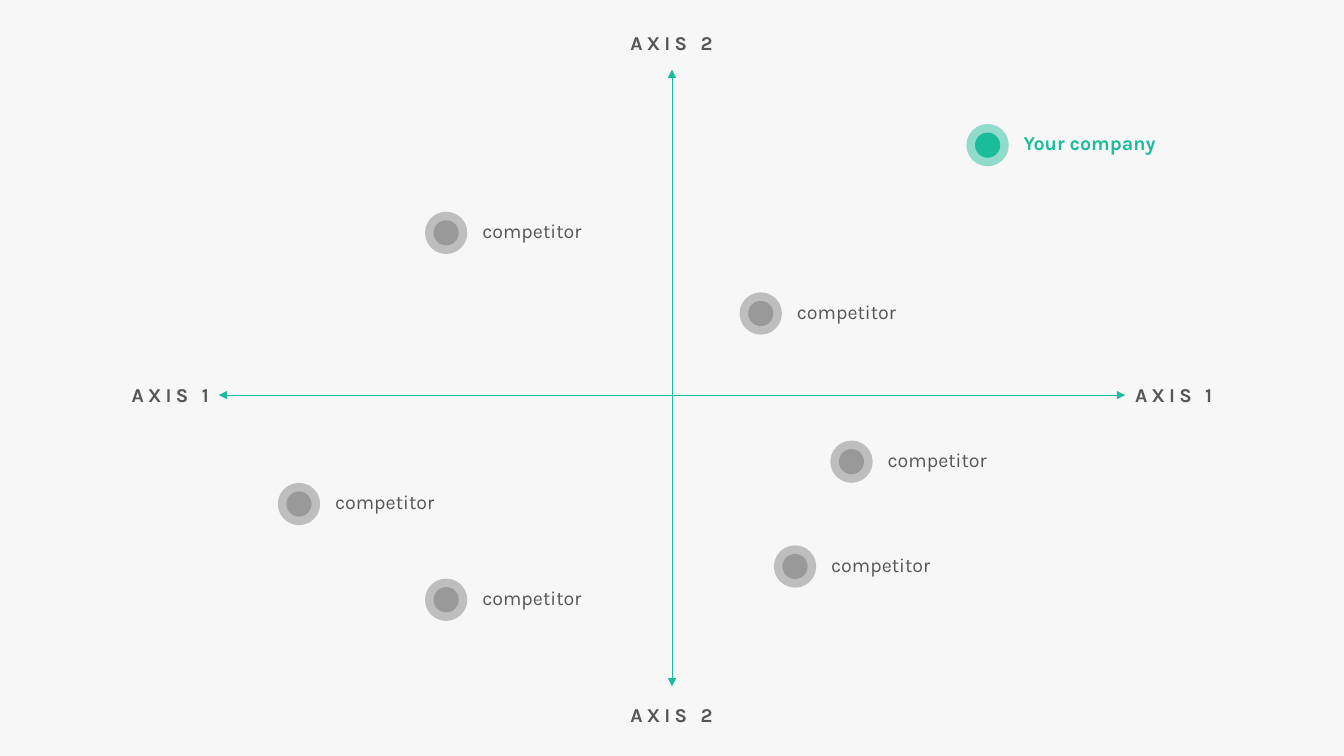
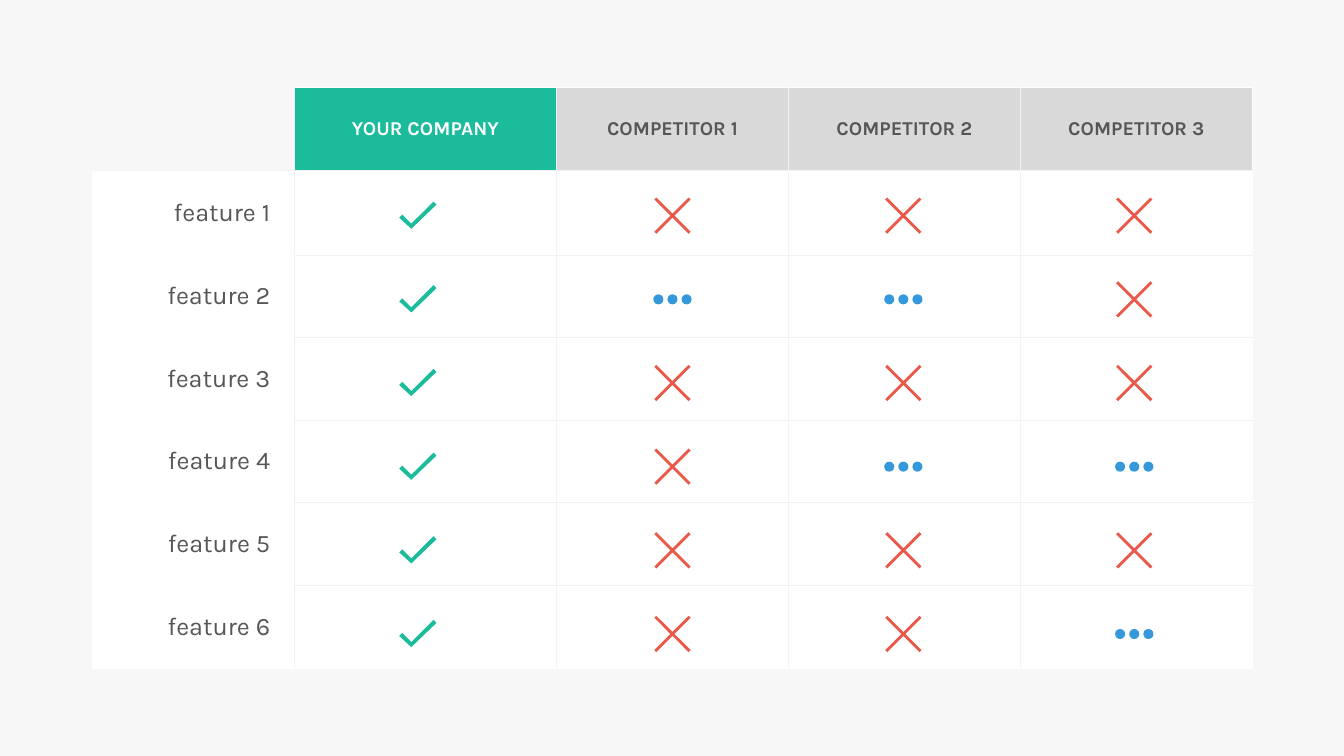
import pptx
import pptx.util
import pptx.dml.color
import pptx.enum.shapes
import pptx.enum.text
import pptx.oxml.ns
import lxml.etree

# Shared look
Inches = pptx.util.Inches
Pt = pptx.util.Pt
ALIGN = pptx.enum.text.PP_ALIGN
SHAPE = pptx.enum.shapes.MSO_SHAPE
qn = pptx.oxml.ns.qn
FONT = "Karla"
GREEN, GRAY, RED, BLUE = "1ABC9C", "565656", "E95849", "3498DB"
BACK, WHITE, HEAD, RULE = "F7F7F7", "FFFFFF", "D9D9D9", "F2F2F2"


def color(hue):
    return pptx.dml.color.RGBColor.from_string(hue)


def paint(fill, hue):
    fill.solid()
    fill.fore_color.rgb = color(hue)


def style(para, size, hue, bold=False, align=ALIGN.LEFT, space=0):
    para.alignment = align
    for run in para.runs:
        font = run.font
        font.name, font.size, font.bold = FONT, Pt(size), bold
        font.color.rgb = color(hue)
        if space:
            run.font._element.set("spc", str(space * 100))


def label(shapes, left, top, text, hue=GRAY, **look):
    box = shapes.add_textbox(Inches(left), Inches(top), Inches(1.87), Inches(0.34))
    frame = box.text_frame
    frame.word_wrap = True
    frame.auto_size = pptx.enum.text.MSO_AUTO_SIZE.SHAPE_TO_FIT_TEXT
    frame.vertical_anchor = pptx.enum.text.MSO_ANCHOR.MIDDLE
    frame.text = text
    style(frame.paragraphs[0], 14, hue, **look)


def disc(shapes, x, y, size, hue, alpha=100):
    """Draw a circle centred on x, y."""
    dot = shapes.add_shape(SHAPE.OVAL, Inches(x - size / 2), Inches(y - size / 2),
                           Inches(size), Inches(size))
    dot.shadow.inherit = False
    dot.line.fill.background()
    paint(dot.fill, hue)
    if alpha < 100:
        tint = dot.element.spPr.find(".//" + qn("a:srgbClr"))
        lxml.etree.SubElement(tint, qn("a:alpha"), val=str(alpha * 1000))


# Market map
RIVALS = [(0.88, -0.81), (1.78, 0.66), (1.22, 1.7),
          (-3.7, 1.08), (-2.24, 2.03), (-2.24, -1.61)]


def arrow(shapes, x1, y1, x2, y2):
    line = shapes.add_connector(pptx.enum.shapes.MSO_CONNECTOR.STRAIGHT,
                                Inches(x1), Inches(y1), Inches(x2), Inches(y2))
    line.line.width = Pt(0.5)
    line.line.color.rgb = color(GREEN)
    props = line.element.spPr
    for end in ("a:headEnd", "a:tailEnd"):
        lxml.etree.SubElement(props.find(qn("a:ln")), qn(end), type="triangle")
    lxml.etree.SubElement(props, qn("a:effectLst"))


def marker(shapes, x, y, text, hue, ring, core, bold=False):
    group = shapes.add_group_shape().shapes
    disc(group, x, y, 0.42, hue, ring)
    disc(group, x, y, 0.25, hue, core)
    label(group, x + 0.26, y - 0.19, text, hue, bold=bold)


def draw_map(slide, left, top, width, height):
    shapes = slide.shapes
    right, base = left + width, top + height
    x, y = left + width / 2, top + 3.23
    arrow(shapes, x, top, x, base)
    arrow(shapes, left, y, right, y)
    for dx, dy in RIVALS:
        marker(shapes, x + dx, y + dy, "competitor", GRAY, 35, 35)
    marker(shapes, x + 3.13, y - 2.48, "Your company", GREEN, 46, 100, True)

    # Axis names
    for lx, ly, text, align in (
            (x - 0.94, top - 0.44, "AXIS 2", ALIGN.CENTER),
            (x - 0.94, base + 0.11, "AXIS 2", ALIGN.CENTER),
            (right, y - 0.17, "AXIS 1", ALIGN.LEFT),
            (left - 1.87, y - 0.17, "AXIS 1", ALIGN.RIGHT)):
        label(shapes, lx, ly, text, bold=True, align=align, space=3)


# Feature table
HEADS = ["", "YOUR COMPANY", "COMPETITOR 1", "COMPETITOR 2", "COMPETITOR 3"]
COLS = [2, 2.6, 2.3, 2.3, 2.3]
ROWS = [0.82, 0.84] + [0.82] * 5
MARKS = ["vxxx", "v..x", "vxxx", "vx..", "vxxx", "vxx."]
MARK_X = [3.22, 5.75, 8.04, 10.33]
TICK = [(0.16, -0.14), (-0.06, 0.08), (-0.15, -0.01),
        (-0.18, 0.02), (-0.06, 0.13), (0.19, -0.11)]
CROSS = [(0.18, -0.16), (0.16, -0.18), (0, -0.02), (-0.16, -0.18),
         (-0.18, -0.16), (-0.02, 0), (-0.18, 0.16), (-0.16, 0.18),
         (0, 0.02), (0.16, 0.18), (0.18, 0.16), (0.02, 0)]


def edge(cell, side, hue):
    """Add one border; no hue means no line."""
    width = Pt(0.75 if hue == RULE else 1)
    line = lxml.etree.SubElement(cell._tc.get_or_add_tcPr(), qn("a:ln" + side),
                                 w=str(int(width)))
    if hue:
        fill = lxml.etree.SubElement(line, qn("a:solidFill"))
        lxml.etree.SubElement(fill, qn("a:srgbClr"), val=hue)
    else:
        lxml.etree.SubElement(line, qn("a:noFill"))


def frame_cell(cell, row, col):
    blank = row == 0 and col == 0
    side = col == 0 and row > 0
    last = row == len(ROWS) - 1
    edge(cell, "L", None if blank else WHITE if col == 0 else RULE)
    edge(cell, "R", WHITE if col == len(COLS) - 1 else RULE)
    edge(cell, "T", None if blank else
         WHITE if row == 0 or (side and row > 1) else RULE)
    edge(cell, "B", WHITE if last or side else RULE)


def fill_cell(cell, row, col):
    frame_cell(cell, row, col)
    cell.vertical_anchor = pptx.enum.text.MSO_ANCHOR.MIDDLE
    para = cell.text_frame.paragraphs[0]
    if row == 0 and col == 0:
        cell.fill.background()
    elif row == 0:
        paint(cell.fill, GREEN if col == 1 else HEAD)
        para.text = HEADS[col]
        style(para, 14, WHITE if col == 1 else GRAY, True, ALIGN.CENTER)
    else:
        paint(cell.fill, WHITE)
        if col == 0:
            cell.margin_right = Inches(0.24)
            para.text = f"feature {row}"
            style(para, 18, GRAY, align=ALIGN.RIGHT)


def icon(shapes, x, y, points, hue):
    spots = [(Inches(x + dx), Inches(y + dy)) for dx, dy in points]
    path = shapes.build_freeform(*spots[0])
    path.add_line_segments(spots[1:], close=True)
    shape = path.convert_to_shape()
    shape.shadow.inherit = False
    shape.line.fill.background()
    paint(shape.fill, hue)


def dots(shapes, x, y):
    group = shapes.add_group_shape().shapes
    for step in (-1, 0, 1):
        disc(group, x + step * 0.14, y, 0.1, BLUE)


def draw_table(slide, left, top, width, height):
    shapes = slide.shapes
    table = shapes.add_table(len(ROWS), len(COLS), Inches(left), Inches(top),
                             Inches(width), Inches(height)).table
    table.first_row = table.horz_banding = False
    for col, size in enumerate(COLS):
        table.columns[col].width = Inches(size)
    for row, size in enumerate(ROWS):
        table.rows[row].height = Inches(size)
        for col in range(len(COLS)):
            fill_cell(table.cell(row, col), row, col)

    # Marks over the cells
    for row, line in enumerate(MARKS):
        y = top + 1.27 + row * 0.83
        for dx, mark in zip(MARK_X, line):
            if mark == "v":
                icon(shapes, left + dx, y, TICK, GREEN)
            elif mark == "x":
                icon(shapes, left + dx, y, CROSS, RED)
            else:
                dots(shapes, left + dx, y)


def main():
    deck = pptx.Presentation()
    deck.slide_width, deck.slide_height = Inches(13.33), Inches(7.5)
    paint(deck.slide_master.background.fill, BACK)
    blank = deck.slide_layouts[6]
    draw_map(deck.slides.add_slide(blank), 2.17, 0.69, 8.99, 6.12)
    draw_table(deck.slides.add_slide(blank), 0.92, 0.87, 11.5, 5.76)
    deck.save("out.pptx")


if __name__ == "__main__":
    main()
